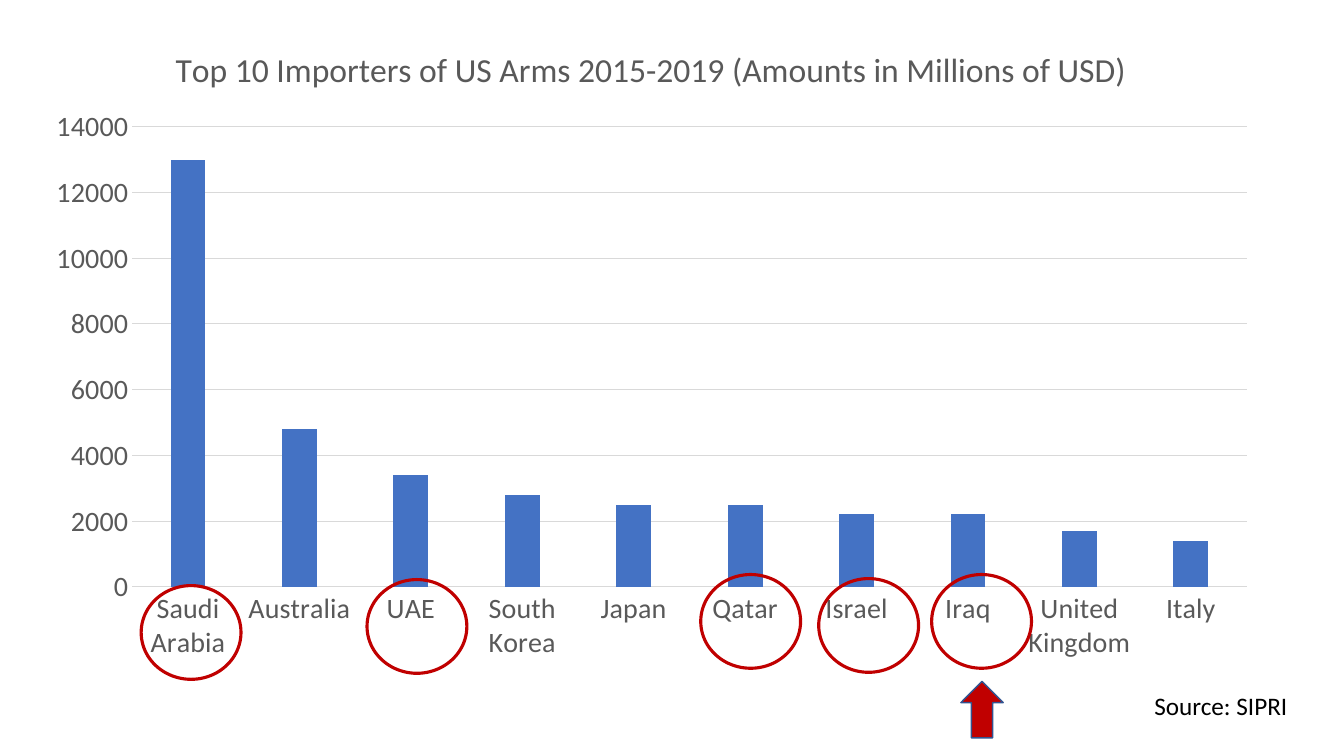
from lxml import etree
from pptx import Presentation
from pptx.chart.data import CategoryChartData
from pptx.dml.color import RGBColor
from pptx.enum.chart import XL_CHART_TYPE, XL_TICK_MARK
from pptx.enum.shapes import MSO_SHAPE
from pptx.enum.text import MSO_AUTO_SIZE
from pptx.oxml.ns import qn
from pptx.util import Pt

COLUMNS = XL_CHART_TYPE.COLUMN_CLUSTERED
NO_TICK = XL_TICK_MARK.NONE
ELLIPSE, ARROW = MSO_SHAPE.OVAL, MSO_SHAPE.RIGHT_ARROW
GROW = MSO_AUTO_SIZE.SHAPE_TO_FIT_TEXT

EMU_PER_PX = 9144
FONT = "Calibri"
COLORS = {
    "text": "000000",
    "muted": "595959",
    "grid": "D9D9D9",
    "bar": "4472C4",
    "mark": "C00000",
    "arrow_edge": "325491",
}

TITLE = "Top 10 Importers of US Arms 2015-2019 (Amounts in Millions of USD)"
IMPORTS = {
    "Saudi Arabia": 13000,
    "Australia": 4800,
    "UAE": 3400,
    "South Korea": 2800,
    "Japan": 2500,
    "Qatar": 2500,
    "Israel": 2200,
    "Iraq": 2200,
    "United Kingdom": 1700,
    "Italy": 1400,
}
# Left and top of the ring around each highlighted country
RINGS = {
    "Saudi Arabia": (140, 581),
    "UAE": (364, 575),
    "Qatar": (695, 570),
    "Israel": (812, 574),
    "Iraq": (924, 570),
}
RING_SIZE = (99, 93)


def px(*lengths):
    return [length * EMU_PER_PX for length in lengths]


def color(name):
    return RGBColor.from_string(COLORS[name])


def style_font(font, size, color_name):
    font.name, font.size, font.bold = FONT, Pt(size), False
    font.color.rgb = color(color_name)


def style_line(line, color_name, width):
    line.color.rgb = color(color_name)
    line.width = Pt(width)


def write(frame, text, size=18, color_name="text"):
    span = frame.paragraphs[0].add_run()
    span.text = text
    style_font(span.font, size, color_name)


def place(parent, before, **fractions):
    """Give a chart part a manual layout, in fractions of the chart."""
    for old in parent.findall(qn("c:layout")):
        parent.remove(old)
    layout = etree.Element(qn("c:layout"))
    parent.find(qn(before)).addprevious(layout)
    manual = etree.SubElement(layout, qn("c:manualLayout"))
    settings = {"xMode": "edge", "yMode": "edge", **fractions}
    if "w" in fractions:
        settings = {"layoutTarget": "inner", **settings}
    for tag, value in settings.items():
        etree.SubElement(manual, qn(f"c:{tag}"), val=str(value))


class Slide:
    def __init__(self, deck):
        self.page = deck.slides.add_slide(deck.slide_layouts[6])

    def chart(self, box, title, values):
        data = CategoryChartData()
        data.categories = list(values)
        data.add_series("Series 1", list(values.values()))
        chart = self.page.shapes.add_chart(COLUMNS, *px(*box), data).chart
        chart.has_legend = False
        style_font(chart.font, 10, "text")

        write(chart.chart_title.text_frame, title, size=24, color_name="muted")
        chart.chart_title.include_in_layout = False
        title_xml = chart.chart_title._element
        place(title_xml, "c:overlay", x=0.11, y=0.04)

        plot = chart.plots[0]
        plot.gap_width, plot.overlap = 219, -27
        plot.vary_by_categories = False
        fill = plot.series[0].format.fill
        fill.solid()
        fill.fore_color.rgb = color("bar")
        place(title_xml.getparent().find(qn("c:plotArea")), "c:barChart",
              x=0.08, y=0.17, w=0.9, h=0.7)

        for axis in (chart.category_axis, chart.value_axis):
            axis.major_tick_mark = axis.minor_tick_mark = NO_TICK
            style_font(axis.tick_labels.font, 20, "muted")
        style_line(chart.category_axis.format.line, "grid", 0.75)
        amounts = chart.value_axis
        amounts.minimum_scale, amounts.maximum_scale = 0, 14000
        amounts.major_unit = 2000
        amounts.format.line.fill.background()
        style_line(amounts.major_gridlines.format.line, "grid", 0.75)

    def text(self, box, text, **text_format):
        frame = self.page.shapes.add_textbox(*px(*box)).text_frame
        frame.word_wrap, frame.auto_size = True, GROW
        write(frame, text, **text_format)

    def shape(self, kind, box, line, width, fill=None, rotation=0):
        shape = self.page.shapes.add_shape(kind, *px(*box))
        shape.shadow.inherit = False
        shape.rotation = rotation
        style_line(shape.line, line, width)
        if fill:
            shape.fill.solid()
            shape.fill.fore_color.rgb = color(fill)
        else:
            shape.fill.background()


def main():
    deck = Presentation()
    deck.slide_width, deck.slide_height = px(1333, 750)
    slide = Slide(deck)
    slide.chart((33, 15, 1228, 652), TITLE, IMPORTS)
    slide.text((1135, 680, 171, 40), "Source: SIPRI", size=18)
    for corner in RINGS.values():
        slide.shape(ELLIPSE, (*corner, *RING_SIZE), line="mark", width=2.25)
    slide.shape(ARROW, (946, 683, 56, 42), line="arrow_edge", width=1,
                fill="mark", rotation=270)
    deck.save("out.pptx")


if __name__ == "__main__":
    main()
